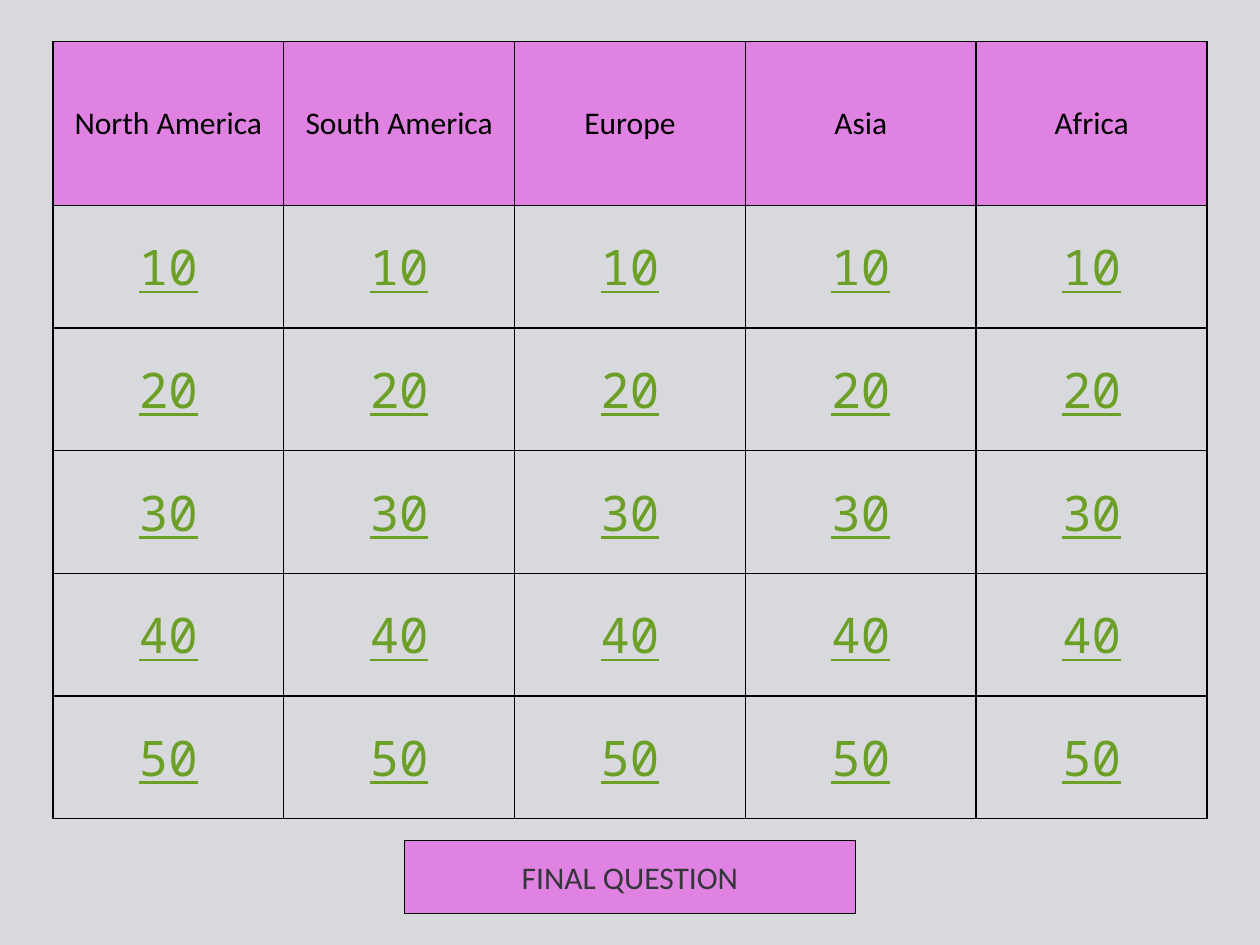
from lxml.etree import SubElement
from pptx import Presentation
from pptx.dml.color import RGBColor
from pptx.enum.shapes import MSO_SHAPE
from pptx.enum.text import MSO_ANCHOR, PP_ALIGN
from pptx.oxml.ns import qn
from pptx.util import Inches, Pt

COLORS = {"background": "D8D9DC", "accent": "DF82E2", "border": "000000",
          "category": "000000", "points": "6B9F25", "final": "343539"}
CATEGORIES = ["North America", "South America", "Europe", "Asia", "Africa"]
POINTS = [10, 20, 30, 40, 50]
rows = [CATEGORIES] + [[str(n)] * len(CATEGORIES) for n in POINTS]


def add_text(tf, text, size, font, color):
    p = tf.paragraphs[0]
    p.alignment = PP_ALIGN.CENTER
    r = p.add_run()
    r.text = text
    r.font.size = Pt(size)
    r.font.name = font
    r.font.color.rgb = RGBColor.from_string(COLORS[color])
    return p, r


def add_borders(cell):
    """Draw a thin solid line on all four sides of a cell."""
    tcPr = cell._tc.get_or_add_tcPr()
    for i, side in enumerate(("a:lnL", "a:lnR", "a:lnT", "a:lnB")):
        ln = tcPr.makeelement(qn(side), {"w": str(Pt(1))})
        fill = SubElement(ln, qn("a:solidFill"))
        SubElement(fill, qn("a:srgbClr"), val=COLORS["border"])
        tcPr.insert(i, ln)


prs = Presentation()
prs.slide_width, prs.slide_height = Inches(10), Inches(7.5)
W, H = prs.slide_width, prs.slide_height
slide = prs.slides.add_slide(prs.slide_layouts[6])
slide.background.fill.solid()
slide.background.fill.fore_color.rgb = RGBColor.from_string(COLORS["background"])

# Game board: one tall category row, then equal rows of points
left, top = Inches(0.42), Inches(0.33)
board_w, board_h, header_h = W - 2 * left, Inches(6.17), Inches(1.3)
frame = slide.shapes.add_table(len(rows), len(CATEGORIES), left, top, board_w, board_h)
board = frame.table
board.horz_banding = False
for col in board.columns:
    col.width = board_w // len(CATEGORIES)
for i, row in enumerate(board.rows):
    row.height = header_h if i == 0 else (board_h - header_h) // len(POINTS)

for i, texts in enumerate(rows):
    for j, text in enumerate(texts):
        cell = board.cell(i, j)
        cell.vertical_anchor = MSO_ANCHOR.MIDDLE
        if i == 0:
            cell.fill.solid()
            cell.fill.fore_color.rgb = RGBColor.from_string(COLORS["accent"])
            p, r = add_text(cell.text_frame, text, 18, "Calibri", "category")
        else:
            cell.fill.background()
            p, r = add_text(cell.text_frame, text, 28, "Noto Sans Mono", "points")
            r.font.underline = True
        before = SubElement(p._p.get_or_add_pPr(), qn("a:spcBef"))
        SubElement(before, qn("a:spcPct"), val="20000")
        add_borders(cell)

# Final round button, centred below the board
final_w, final_h = Inches(3.58), Inches(0.58)
sp = slide.shapes.add_shape(MSO_SHAPE.RECTANGLE, (W - final_w) // 2,
                            H - Inches(0.25) - final_h, final_w, final_h)
sp.shadow.inherit = False
sp.fill.solid()
sp.fill.fore_color.rgb = RGBColor.from_string(COLORS["accent"])
sp.line.color.rgb = RGBColor.from_string(COLORS["border"])
sp.line.width = Pt(1)
sp.text_frame.vertical_anchor = MSO_ANCHOR.MIDDLE
add_text(sp.text_frame, "FINAL QUESTION", 18, "Calibri", "final")

prs.save("out.pptx")
